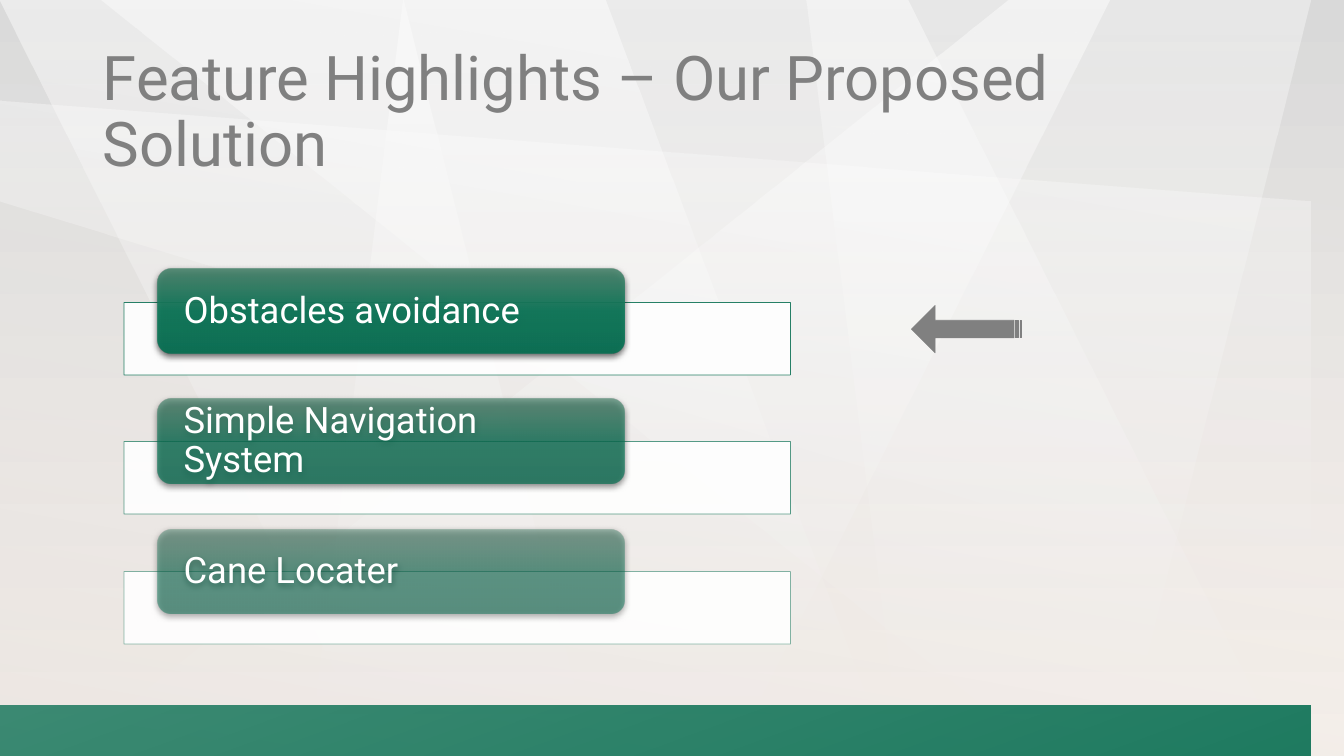
from pptx import Presentation
from pptx import util as u
from pptx.dml.color import RGBColor
from pptx.enum import shapes, text
from pptx.oxml import parse_xml
from pptx.oxml.ns import nsdecls, qn

GREEN, GREY, WHITE = "107357", "808080", "FFFFFF"

# Vertices of the pale background facets, with the opacity of their top edge
FACETS = [
    ([(9.79, 0), (0, 7.51), (7.01, 7.51), (11.25, 0)], 50),
    ([(0, 0), (3.58, 0), (5.94, 7.5), (3.91, 7.5)], 50),
    ([(1.32, 0), (9.07, 0), (13.33, 7.5), (10.83, 7.5)], 50),
    ([(7.65, 0), (8.56, 7.5), (11.15, 7.5), (12.57, 0)], 40),
    ([(5.89, 0), (4.46, 0), (2.72, 7.5), (9.39, 7.5)], 50),
    ([(0, 0.87), (13.33, 1.86), (13.33, 6.1), (0, 2.32)], 40),
]
FOOTER = [(0, 7.27), (13.34, 6.82), (13.34, 7.51), (0, 7.51)]

# Label, top of the bar, opacity of the button
FEATURES = [
    ("Obstacles avoidance", 3, 90),
    ("Simple Navigation System", 4.38, 70),
    ("Cane Locater", 5.67, 50),
]


def rgb(value):
    return RGBColor.from_string(value)


def set_alpha(color_parent, percent):
    color = color_parent.find(".//" + qn("a:srgbClr"))
    color.append(parse_xml(f'<a:alpha {nsdecls("a")} val="{percent * 1000}"/>'))


def gradient(fill, element, stops, angle):
    """Give a fill its (position, colour, opacity) stops; angle is clockwise."""
    fill.gradient()
    old = element.find(".//" + qn("a:gradFill"))
    stop_xml = "".join(
        f'<a:gs pos="{pos * 1000}"><a:srgbClr val="{color}">'
        f'<a:alpha val="{alpha * 1000}"/></a:srgbClr></a:gs>'
        for pos, color, alpha in stops)
    old.getparent().replace(old, parse_xml(
        f'<a:gradFill {nsdecls("a")} rotWithShape="1"><a:gsLst>{stop_xml}</a:gsLst>'
        f'<a:lin ang="{angle * 60000}" scaled="0"/></a:gradFill>'))


def add_polygon(s, points, stops, angle):
    builder = s.shapes.build_freeform(*points[0], scale=u.Inches(1))
    builder.add_line_segments(points[1:], close=True)
    sp = builder.convert_to_shape()
    sp.shadow.inherit = False
    sp.line.fill.background()
    gradient(sp.fill, sp._element.spPr, stops, angle)


def add_shape(s, kind, box, fill=None, line=None):
    sp = s.shapes.add_shape(kind, *map(u.Inches, box))
    sp.shadow.inherit = False
    if fill:
        sp.fill.solid()
        sp.fill.fore_color.rgb = rgb(fill)
    if line:
        sp.line.color.rgb = rgb(line)
        sp.line.width = u.Pt(0.5)
    else:
        sp.line.fill.background()
    return sp


def write(sp, words, size, color, **frame):
    tf = sp.text_frame
    frame_format = {"word_wrap": True,
                    "vertical_anchor": text.MSO_ANCHOR.MIDDLE, **frame}
    for name, value in frame_format.items():
        setattr(tf, name, value)
    p = tf.paragraphs[0]
    p.alignment = text.PP_ALIGN.LEFT
    p.line_spacing = 0.9
    r = p.add_run()
    r.text = words
    for name, value in {"name": "Roboto", "size": u.Pt(size)}.items():
        setattr(r.font, name, value)
    r.font.color.rgb = rgb(color)


def add_background(s):
    gradient(s.background.fill, s._element,
             [(0, "D9D9D9", 50), (100, "FCF5EF", 100)], 90)
    for points, alpha in FACETS:
        add_polygon(s, points, [(0, WHITE, alpha), (100, WHITE, 0)], 90)
    veil = add_shape(s, shapes.MSO_SHAPE.RECTANGLE, (0, 0, 13.33, 7.5))
    gradient(veil.fill, veil._element.spPr,
             [(0, "BFBFBF", 25), (100, WHITE, 0)], 280)
    add_polygon(s, FOOTER, [(0, GREEN, 80), (100, GREEN, 95)], 70)


def add_feature(s, label, bar_top, button_top, alpha):
    # White bar behind the button
    bar = add_shape(s, shapes.MSO_SHAPE.RECTANGLE,
                    (1.23, bar_top, 6.61, 0.72), WHITE, GREEN)
    set_alpha(bar._element.spPr.find(qn("a:solidFill")), 90)
    set_alpha(bar._element.spPr.find(qn("a:ln")), alpha)

    # Green button with its label
    button = add_shape(s, shapes.MSO_SHAPE.ROUNDED_RECTANGLE,
                       (1.56, button_top, 4.63, 0.84))
    spPr = button._element.spPr
    gradient(button.fill, spPr, [(0, "4C856E", alpha), (50, "0B7859", alpha),
                                 (100, "056F51", alpha)], 90)
    spPr.find(qn("a:effectLst")).append(parse_xml(
        f'<a:outerShdw {nsdecls("a")} blurRad="{u.Pt(4.5)}" dist="{u.Pt(1.5)}" '
        'dir="5400000" algn="ctr" rotWithShape="0"><a:srgbClr val="000000">'
        '<a:alpha val="63000"/></a:srgbClr></a:outerShdw>'))
    write(button, label, 26, WHITE, margin_left=u.Inches(0.22),
          margin_right=u.Inches(0.3), margin_top=0, margin_bottom=0)


def add_arrow(s):
    arrow = add_shape(s, shapes.MSO_SHAPE.STRIPED_RIGHT_ARROW,
                      (9.04, 3.03, 1.09, 0.47), GREY, GREY)
    arrow.adjustments[0] = 0.37
    arrow.adjustments[1] = 0.5
    arrow._element.spPr.find(qn("a:xfrm")).set("flipH", "1")


def main():
    prs = Presentation()
    prs.slide_width, prs.slide_height = u.Inches(13.33), u.Inches(7.5)
    s = prs.slides.add_slide(prs.slide_layouts[6])
    add_background(s)

    # Title
    title = s.shapes.add_textbox(*map(u.Inches, (0.92, 0.4, 11.5, 1.45)))
    write(title, "Feature Highlights – Our Proposed Solution", 44, GREY)

    # Feature list, with the arrow pointing at the first entry
    for row, (label, bar_top, alpha) in enumerate(FEATURES):
        add_feature(s, label, bar_top, 2.67 + 1.29 * row, alpha)
    add_arrow(s)
    prs.save("out.pptx")


if __name__ == "__main__":
    main()
